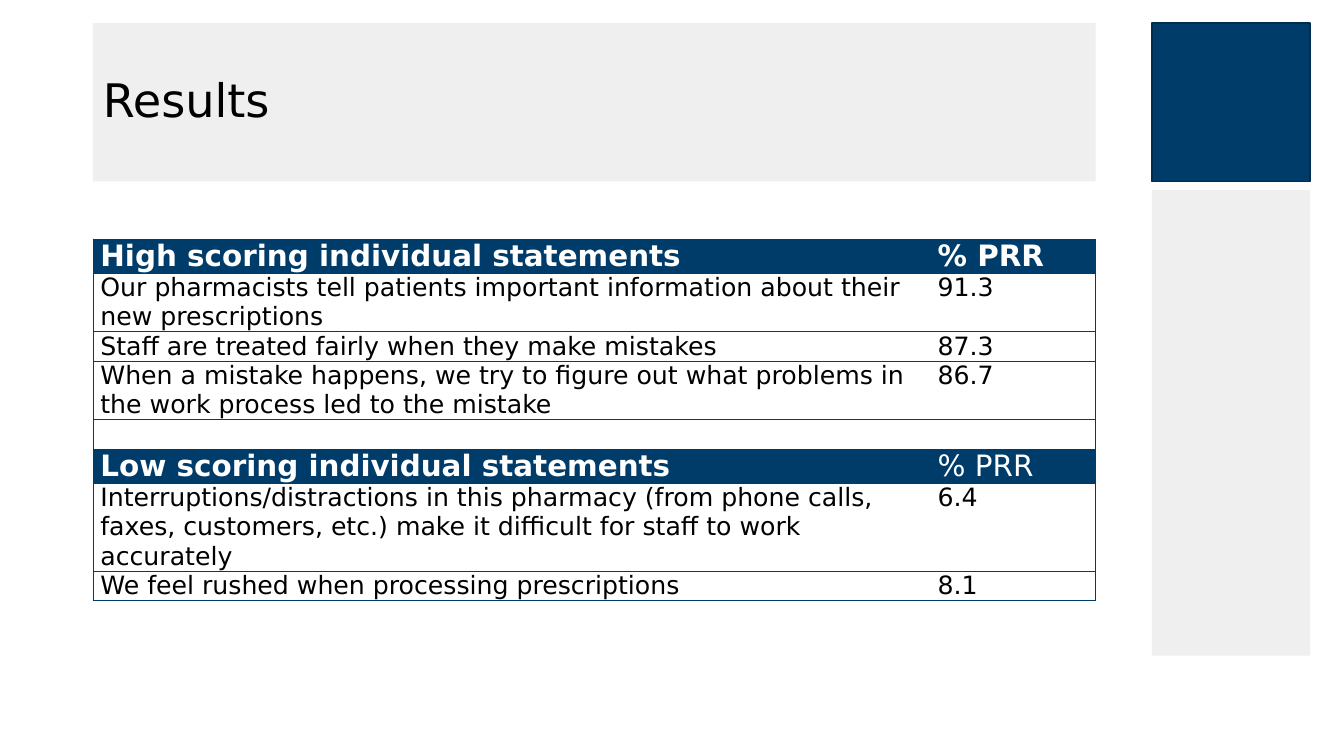
import dataclasses

import lxml.etree
import pptx
import pptx.dml.color
import pptx.enum.shapes
import pptx.enum.text
import pptx.oxml.ns
import pptx.util

Cm = pptx.util.Cm
Pt = pptx.util.Pt
qn = pptx.oxml.ns.qn


@dataclasses.dataclass(frozen=True)
class Theme:
    """Colours, font and type sizes of the deck."""
    navy: str = "003C69"
    navy_edge: str = "002C4E"
    grey: str = "EFEFF0"
    white: str = "FFFFFF"
    black: str = "000000"
    font: str = "DejaVu Sans"
    title: int = 33
    heading: int = 21
    body: int = 18
    rule: float = 0.5
    line_height: float = 1.164


THEME = Theme()

GROUPS = [
    ("High scoring individual statements", True, [
        ("Our pharmacists tell patients important information about their "
         "new prescriptions", "91.3", 2),
        ("Staff are treated fairly when they make mistakes", "87.3", 1),
        ("When a mistake happens, we try to figure out what problems in "
         "the work process led to the mistake", "86.7", 2),
        ("", "", 1),
    ]),
    ("Low scoring individual statements", False, [
        ("Interruptions/distractions in this pharmacy (from phone calls, "
         "faxes, customers, etc.) make it difficult for staff to work "
         "accurately", "6.4", 3),
        ("We feel rushed when processing prescriptions", "8.1", 1),
    ]),
]


def rgb(colour):
    """Turn a hex string into a colour."""
    return pptx.dml.color.RGBColor.from_string(colour)


def write(p, text, size=THEME.body, colour=THEME.black, bold=False):
    """Put formatted text in a paragraph."""
    if not text:
        end = lxml.etree.SubElement(p._p, qn("a:endParaRPr"), sz=str(size * 100))
        lxml.etree.SubElement(end, qn("a:latin"), typeface=THEME.font)
        return
    r = p.add_run()
    r.text = text
    r.font.name = THEME.font
    r.font.size = Pt(size)
    r.font.bold = bold
    r.font.color.rgb = rgb(colour)


def add_panel(s, box, fill, edge=None):
    """Draw a plain rectangle in the box."""
    sp = s.shapes.add_shape(pptx.enum.shapes.MSO_SHAPE.RECTANGLE, *box)
    sp.shadow.inherit = False
    sp.fill.solid()
    sp.fill.fore_color.rgb = rgb(fill)
    if edge:
        sp.line.color.rgb = rgb(edge)
        sp.line.width = Pt(1)
    else:
        sp.line.fill.background()


def add_sidebar(s, box):
    """Draw the navy square and the grey column below it."""
    left, top, width, height = box
    column_top = top + width + Cm(0.22)
    add_panel(s, (left, column_top, width, top + height - column_top), THEME.grey)
    add_panel(s, (left, top, width, width), THEME.navy, THEME.navy_edge)


def add_title(s, box, text):
    """Place the title placeholder on its grey band."""
    sp = s.shapes.title
    sp.left, sp.top, sp.width, sp.height = box
    sp.fill.solid()
    sp.fill.fore_color.rgb = rgb(THEME.grey)
    tf = sp.text_frame
    tf.auto_size = pptx.enum.text.MSO_AUTO_SIZE.NONE
    tf.vertical_anchor = pptx.enum.text.MSO_ANCHOR.MIDDLE
    p = tf.paragraphs[0]
    p.alignment = pptx.enum.text.PP_ALIGN.LEFT
    p.line_spacing = 0.9
    write(p, text, size=THEME.title)


def set_borders(cell, visible):
    """Rule the named sides of a cell and clear the others."""
    tc_pr = cell._tc.get_or_add_tcPr()
    for side in "LRTB":
        ln = lxml.etree.SubElement(tc_pr, qn(f"a:ln{side}"), w=str(Pt(THEME.rule)))
        if side in visible:
            fill = lxml.etree.SubElement(ln, qn("a:solidFill"))
            lxml.etree.SubElement(fill, qn("a:srgbClr"), val=THEME.navy)
        else:
            lxml.etree.SubElement(ln, qn("a:noFill"))


def fill_cell(cell, text, borders, fill=None, **fmt):
    """Format one table cell and write its text."""
    cell.margin_left = cell.margin_right = Cm(0.19)
    cell.margin_top = cell.margin_bottom = 0
    set_borders(cell, borders)
    if fill:
        cell.fill.solid()
        cell.fill.fore_color.rgb = rgb(fill)
    else:
        cell.fill.background()
    write(cell.text_frame.paragraphs[0], text, **fmt)


def add_scores(s, box, groups):
    """Build the score table, with row heights set by their line counts."""
    left, top, width = box
    rows = []
    for heading, bold_score, statements in groups:
        head = dict(fill=THEME.navy, size=THEME.heading, colour=THEME.white)
        rows.append((heading, "% PRR", 1, dict(head, bold=True),
                     dict(head, bold=bold_score)))
        rows += [(text, score, lines, {}, {}) for text, score, lines in statements]
    heights = [Pt(lines * fmt.get("size", THEME.body) * THEME.line_height)
               for _, _, lines, fmt, _ in rows]
    table = s.shapes.add_table(len(rows), 2, left, top, width, sum(heights)).table
    table.first_row = table.horz_banding = False
    table.columns[1].width = Cm(4.17)
    table.columns[0].width = width - table.columns[1].width
    for i, (text, score, _, text_fmt, score_fmt) in enumerate(rows):
        table.rows[i].height = heights[i]
        fill_cell(table.cell(i, 0), text, "LTB", **text_fmt)
        fill_cell(table.cell(i, 1), score, "RTB", **score_fmt)


def add_results_slide(prs):
    """Lay out the results slide."""
    s = prs.slides.add_slide(prs.slide_layouts[5])
    left, top, width = Cm(2.34), Cm(0.58), Cm(25.27)
    add_sidebar(s, (Cm(29.03), top, Cm(3.99), Cm(15.94)))
    add_title(s, (left, top, width, Cm(3.99)), "Results")
    add_scores(s, (left, Cm(6.02), width), GROUPS)


def main():
    """Build and save the deck."""
    prs = pptx.Presentation()
    prs.slide_width, prs.slide_height = Cm(33.87), Cm(19.05)
    add_results_slide(prs)
    prs.save("out.pptx")


if __name__ == "__main__":
    main()
